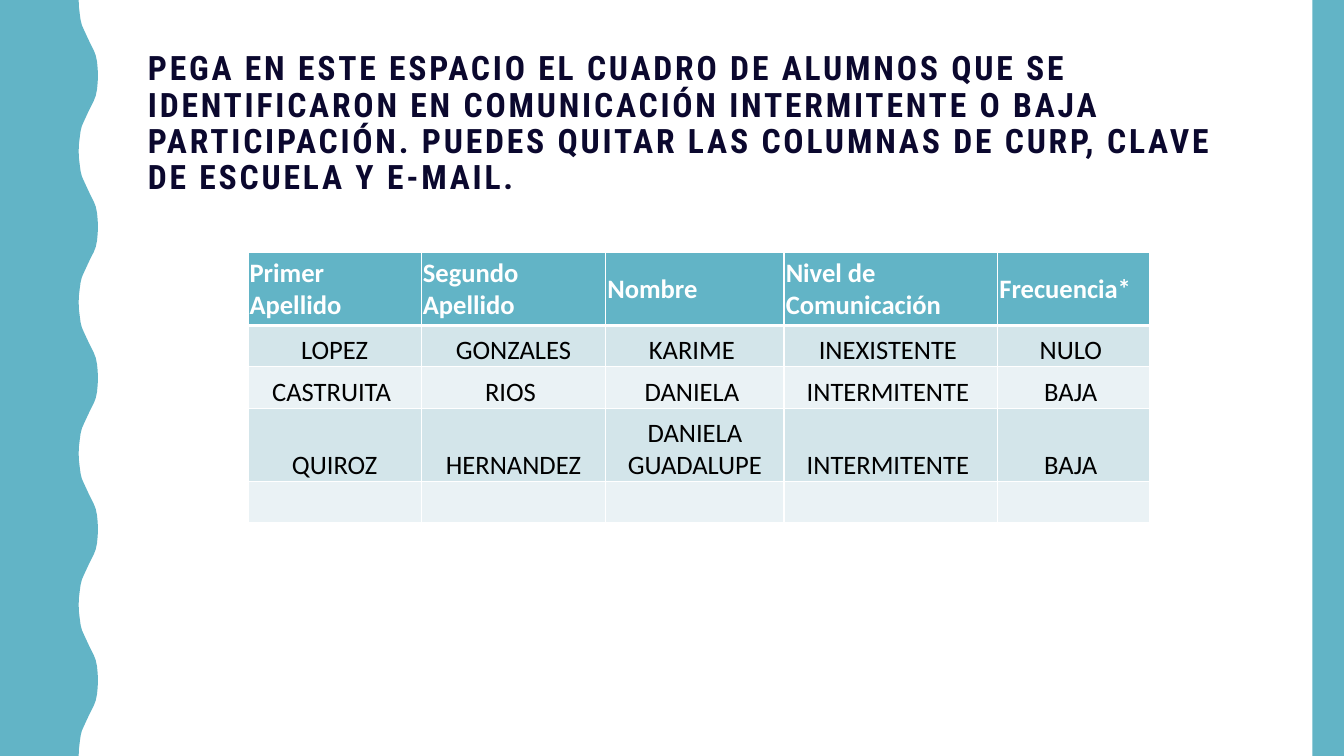
from lxml import etree
from pptx import Presentation
from pptx.dml.color import RGBColor
from pptx.enum.shapes import MSO_SHAPE
from pptx.enum.text import MSO_ANCHOR, PP_ALIGN
from pptx.oxml.ns import qn
from pptx.util import Pt

RECTANGLE = MSO_SHAPE.RECTANGLE
MIDDLE, BOTTOM = MSO_ANCHOR.MIDDLE, MSO_ANCHOR.BOTTOM
LEFT, CENTER = PP_ALIGN.LEFT, PP_ALIGN.CENTER

HEADING = (
    "PEGA EN ESTE ESPACIO EL CUADRO DE ALUMNOS QUE SE IDENTIFICARON EN "
    "COMUNICACIÓN INTERMITENTE O BAJA PARTICIPACIÓN. PUEDES QUITAR LAS "
    "COLUMNAS DE CURP, CLAVE DE ESCUELA Y E-MAIL."
)
STUDENTS = [
    ("Primer Apellido", "Segundo Apellido", "Nombre", "Nivel de Comunicación", "Frecuencia*"),
    ("LOPEZ", "GONZALES", "KARIME ", "INEXISTENTE ", "NULO "),
    ("CASTRUITA ", "RIOS ", "DANIELA ", "INTERMITENTE ", "BAJA "),
    ("QUIROZ", "HERNANDEZ", "DANIELA GUADALUPE", "INTERMITENTE ", "BAJA "),
    ("", "", "", "", ""),
]
THEME = {
    "accent": "62B4C6", "ink": "0B082E", "white": "FFFFFF", "black": "000000",
    "bands": ("EAF2F5", "D3E5EA"),
    "heading_font": "Roboto Condensed", "heading_size": 24,
    "table_font": "Calibri", "table_size": 19,
}

SLIDE_W, SLIDE_H = 960, 540
SIDE_BAR_W = 22.5
HEADING_BOX = (98.6, 30.2, 801.4, 117.4)
TABLE_LEFT, TABLE_TOP = 177.1, 180
COLUMN_WIDTHS = (123.8, 131.8, 127.4, 152.6, 108.7)
ROW_HEIGHTS = (52.6, 29.5, 29.5, 52.6, 29.5)
WAVE_PERIOD = 108
HALF_WAVE = [
    (56.2, 0), (56.4, 5), (57, 10), (57.6, 14.4), (58.5, 18), (59.8, 21),
    (61.2, 24), (62.6, 27), (64, 30), (65.5, 33), (67, 36), (68.4, 39.6),
    (69.3, 44), (69.8, 49), (70, 54),
]


def color(value):
    return RGBColor.from_string(value)


def paint(shape):
    shape.shadow.inherit = False
    shape.fill.solid()
    shape.fill.fore_color.rgb = color(THEME["accent"])
    shape.line.fill.background()


def style(paragraph, font, size, ink, bold):
    paragraph.font.name = font
    paragraph.font.size = Pt(size)
    paragraph.font.color.rgb = color(ink)
    paragraph.font.bold = bold


def add_wave(slide):
    full_wave = HALF_WAVE + [(x, WAVE_PERIOD - y) for x, y in HALF_WAVE[-2::-1]]
    edge = [
        (Pt(x), Pt(top + y))
        for top in range(0, SLIDE_H, WAVE_PERIOD)
        for x, y in full_wave
    ]
    builder = slide.shapes.build_freeform(0, 0, scale=1.0)
    builder.add_line_segments(edge + [(0, Pt(SLIDE_H))], close=True)
    paint(builder.convert_to_shape())


def add_borders(cell, row):
    properties = cell._tc.get_or_add_tcPr()
    widths = {"lnL": 1, "lnR": 1, "lnT": 3 if row == 1 else 1, "lnB": 3 if row == 0 else 1}
    for side, width in widths.items():
        line = etree.SubElement(properties, qn("a:" + side), w=str(Pt(width)))
        fill = etree.SubElement(line, qn("a:solidFill"))
        etree.SubElement(fill, qn("a:srgbClr"), val=THEME["white"])


def add_heading(slide):
    frame = slide.shapes.add_textbox(*map(Pt, HEADING_BOX)).text_frame
    frame.word_wrap = True
    frame.vertical_anchor = MIDDLE
    heading = frame.paragraphs[0]
    heading.line_spacing = 0.9
    style(heading, THEME["heading_font"], THEME["heading_size"], THEME["ink"], True)
    run = heading.add_run()
    run.text = HEADING
    run._r.get_or_add_rPr().set("spc", "200")


def add_students(slide):
    table = slide.shapes.add_table(
        len(STUDENTS), len(COLUMN_WIDTHS), Pt(TABLE_LEFT), Pt(TABLE_TOP),
        Pt(sum(COLUMN_WIDTHS)), Pt(sum(ROW_HEIGHTS)),
    ).table
    for column, width in zip(table.columns, COLUMN_WIDTHS):
        column.width = Pt(width)
    for row, (entries, height) in enumerate(zip(STUDENTS, ROW_HEIGHTS)):
        table.rows[row].height = Pt(height)
        header = row == 0
        for column, entry in enumerate(entries):
            cell = table.cell(row, column)
            add_borders(cell, row)
            cell.fill.solid()
            cell.fill.fore_color.rgb = color(THEME["accent"] if header else THEME["bands"][row % 2])
            cell.margin_left = cell.margin_right = cell.margin_top = Pt(1.2)
            cell.margin_bottom = 0
            cell.vertical_anchor = MIDDLE if header else BOTTOM
            cell.text = entry
            paragraph = cell.text_frame.paragraphs[0]
            paragraph.alignment = LEFT if header else CENTER
            ink = THEME["white"] if header else THEME["black"]
            style(paragraph, THEME["table_font"], THEME["table_size"], ink, header)


def main():
    deck = Presentation()
    deck.slide_width, deck.slide_height = Pt(SLIDE_W), Pt(SLIDE_H)
    slide = deck.slides.add_slide(deck.slide_layouts[6])
    add_heading(slide)
    add_wave(slide)
    paint(slide.shapes.add_shape(
        RECTANGLE, Pt(SLIDE_W - SIDE_BAR_W), 0, Pt(SIDE_BAR_W), Pt(SLIDE_H)))
    add_students(slide)
    deck.save("out.pptx")


if __name__ == "__main__":
    main()
